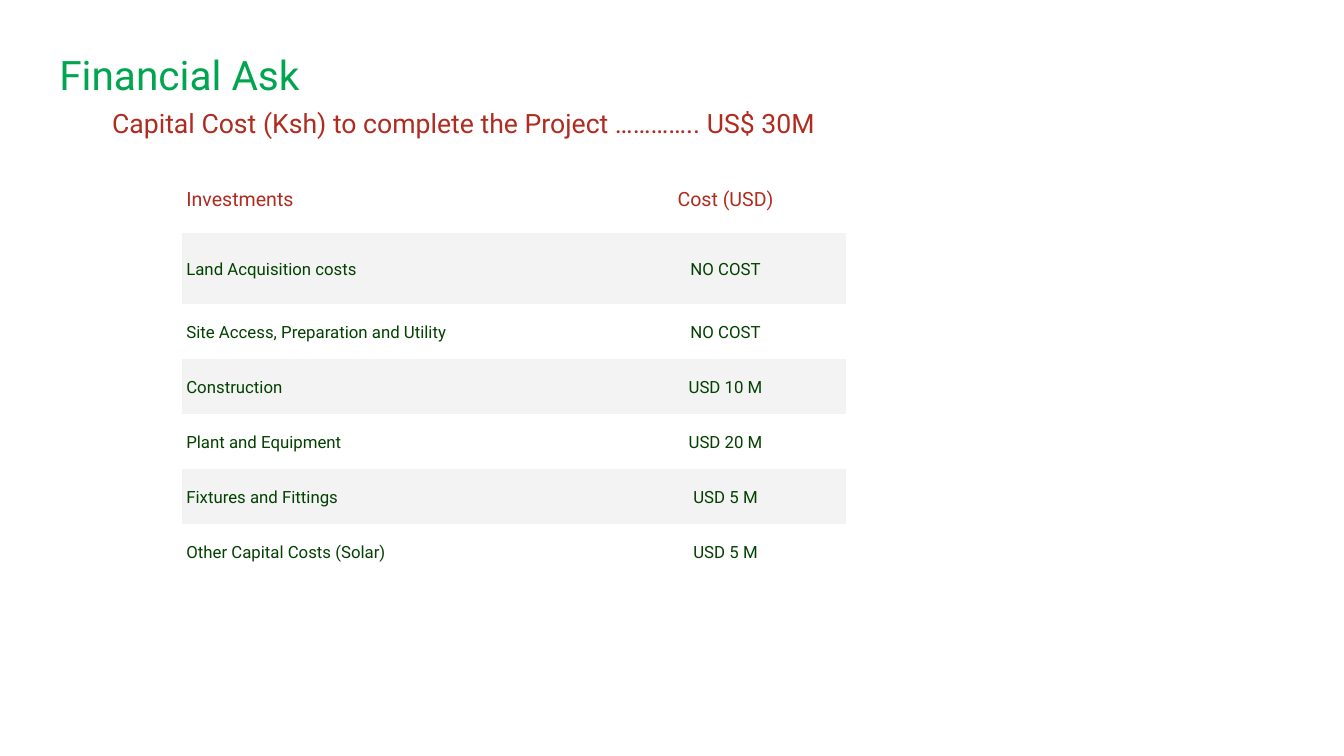
from pptx import Presentation
from pptx.dml.color import RGBColor
from pptx.enum.text import MSO_ANCHOR, MSO_AUTO_SIZE, PP_ALIGN
from pptx.util import Pt

GREEN = RGBColor(0x00, 0xA5, 0x4F)
RED = RGBColor(0xB0, 0x2C, 0x20)
DARK_GREEN = RGBColor(0x03, 0x41, 0x01)
BAND = RGBColor(0xF3, 0xF3, 0xF3)

LEFT, CENTER = PP_ALIGN.LEFT, PP_ALIGN.CENTER
MIDDLE, TOP = MSO_ANCHOR.MIDDLE, MSO_ANCHOR.TOP
FIT_SHAPE = MSO_AUTO_SIZE.SHAPE_TO_FIT_TEXT
NO_AUTOSIZE = MSO_AUTO_SIZE.NONE
TITLE_ONLY = 5
NO_GRID_STYLE = "{2D5ABB26-0587-4C30-8999-92F81FD0307C}"

COSTS = [
    ("Investments", "Cost (USD)"),
    ("Land Acquisition costs", "NO COST"),
    ("Site Access, Preparation and Utility", "NO COST"),
    ("Construction", "USD 10 M"),
    ("Plant and Equipment", "USD 20 M"),
    ("Fixtures and Fittings", "USD 5 M"),
    ("Other Capital Costs (Solar)", "USD 5 M"),
]


class SlideBuilder:
    font = "Roboto"
    box_inset = Pt(19.2)
    line_spacing = 1.15

    def __init__(self, slide):
        self.slide = slide

    def add_text(self, frame, text, size, color, align=LEFT, spacing=line_spacing):
        paragraph = frame.paragraphs[0]
        paragraph.alignment = align
        paragraph.line_spacing = spacing
        run = paragraph.add_run()
        run.text = text
        run.font.name = self.font
        run.font.size = Pt(size)
        run.font.color.rgb = color
        return paragraph

    def prepare(self, frame, anchor, auto_size):
        frame.word_wrap = True
        frame.auto_size = auto_size
        frame.vertical_anchor = anchor
        frame.margin_left = frame.margin_right = self.box_inset
        frame.margin_top = frame.margin_bottom = self.box_inset

    def title(self, text, left, top, width, height):
        title = self.slide.shapes.title
        title.left, title.top = Pt(left), Pt(top)
        title.width, title.height = Pt(width), Pt(height)
        self.prepare(title.text_frame, MIDDLE, NO_AUTOSIZE)
        self.add_text(title.text_frame, text, 58, GREEN, spacing=1.0)

    def subtitle(self, text, left, top, width, height):
        box = self.slide.shapes.add_textbox(Pt(left), Pt(top), Pt(width), Pt(height))
        self.prepare(box.text_frame, TOP, FIT_SHAPE)
        self.add_text(box.text_frame, text, 38, RED).space_after = Pt(32)

    def cost_table(self, rows, left, top, widths, heights):
        """Draw a header row followed by rows banded on every odd index."""
        frame = self.slide.shapes.add_table(
            len(rows), len(widths), Pt(left), Pt(top), Pt(sum(widths)), Pt(sum(heights)))
        table = frame.table
        table._tbl.tblPr.find("{*}tableStyleId").text = NO_GRID_STYLE
        for column, width in zip(table.columns, widths):
            column.width = Pt(width)
        for index, (row, height, labels) in enumerate(zip(table.rows, heights, rows)):
            row.height = Pt(height)
            size, color = (24, DARK_GREEN) if index else (28, RED)
            for cell, label, align in zip(row.cells, labels, (LEFT, CENTER)):
                cell.vertical_anchor = MIDDLE
                cell.margin_left = cell.margin_right = Pt(5.6)
                cell.margin_top = cell.margin_bottom = Pt(4.2)
                if index % 2:
                    cell.fill.solid()
                    cell.fill.fore_color.rgb = BAND
                else:
                    cell.fill.background()
                self.add_text(cell.text_frame, label, size, color, align)


def main():
    deck = Presentation()
    deck.slide_width, deck.slide_height = Pt(1920), Pt(1080)
    builder = SlideBuilder(deck.slides.add_slide(deck.slide_layouts[TITLE_ONLY]))
    builder.title("Financial Ask", 65.5, 45.4, 1789, 120)
    builder.cost_table(COSTS, 260.6, 232.6, (603.4, 344.9), [100.8] * 2 + [78.5] * 5)
    builder.subtitle("Capital Cost (Ksh) to complete the Project ………….. US$ 30M",
                     141, 127.4, 1097, 85)
    deck.save("out.pptx")


if __name__ == "__main__":
    main()
